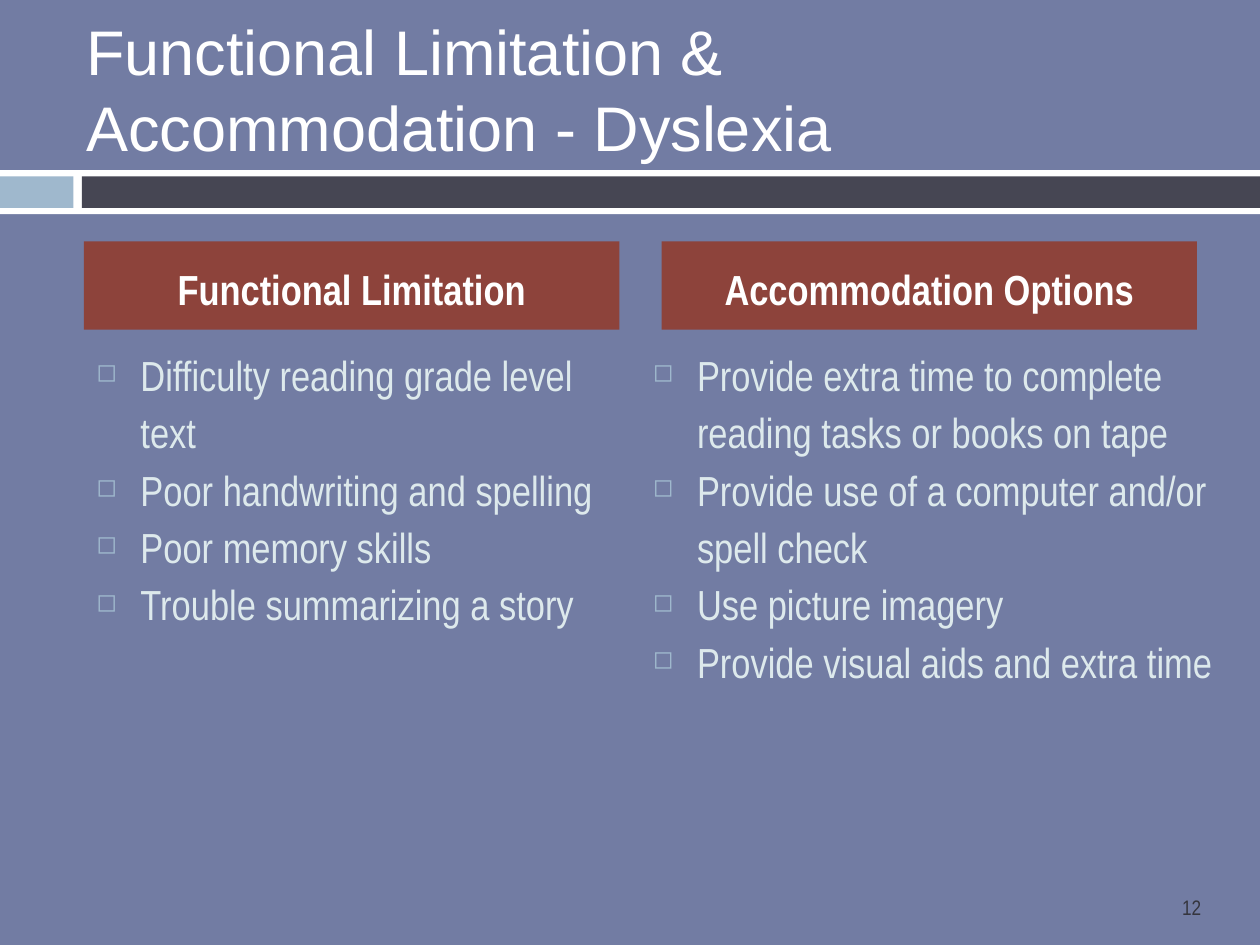
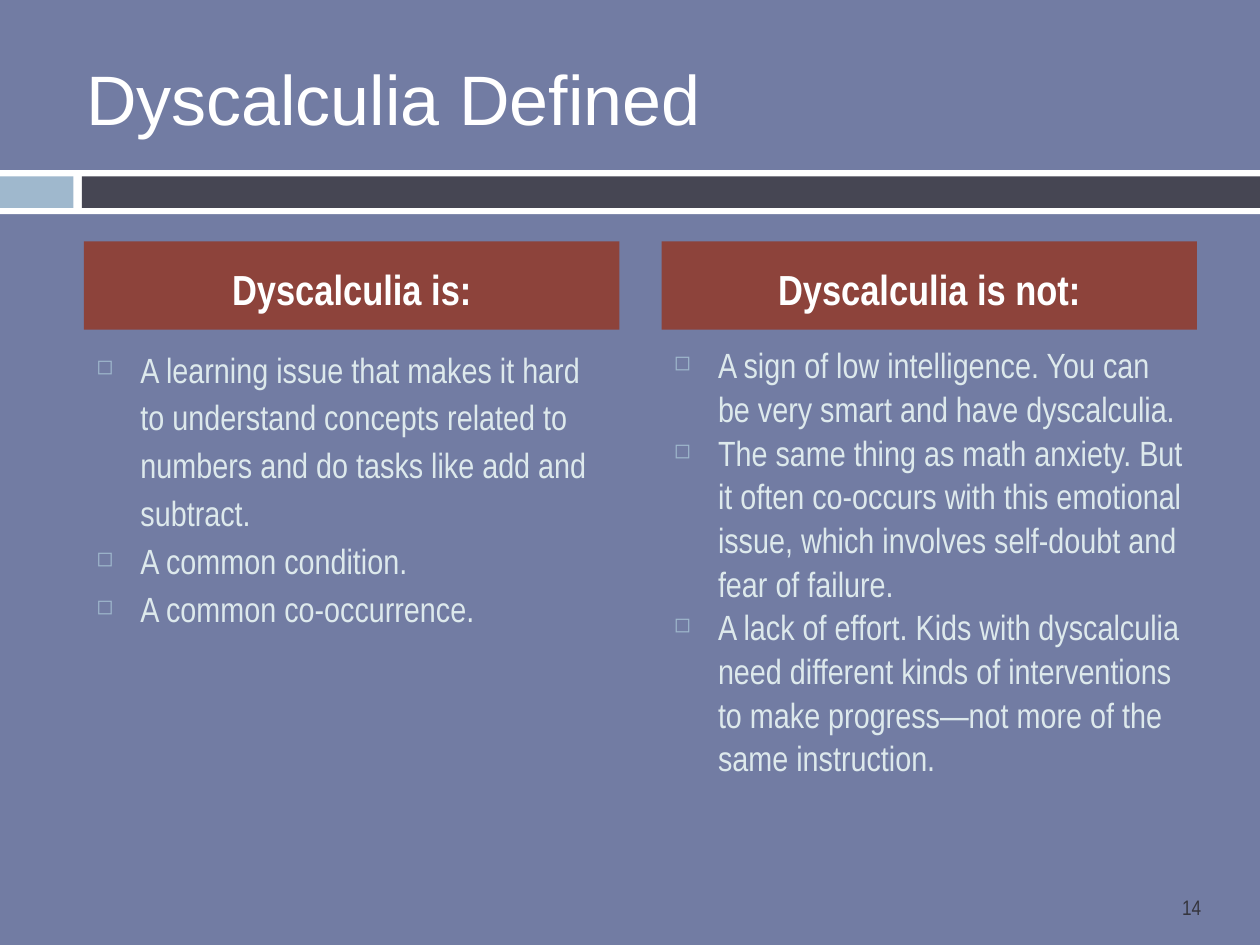
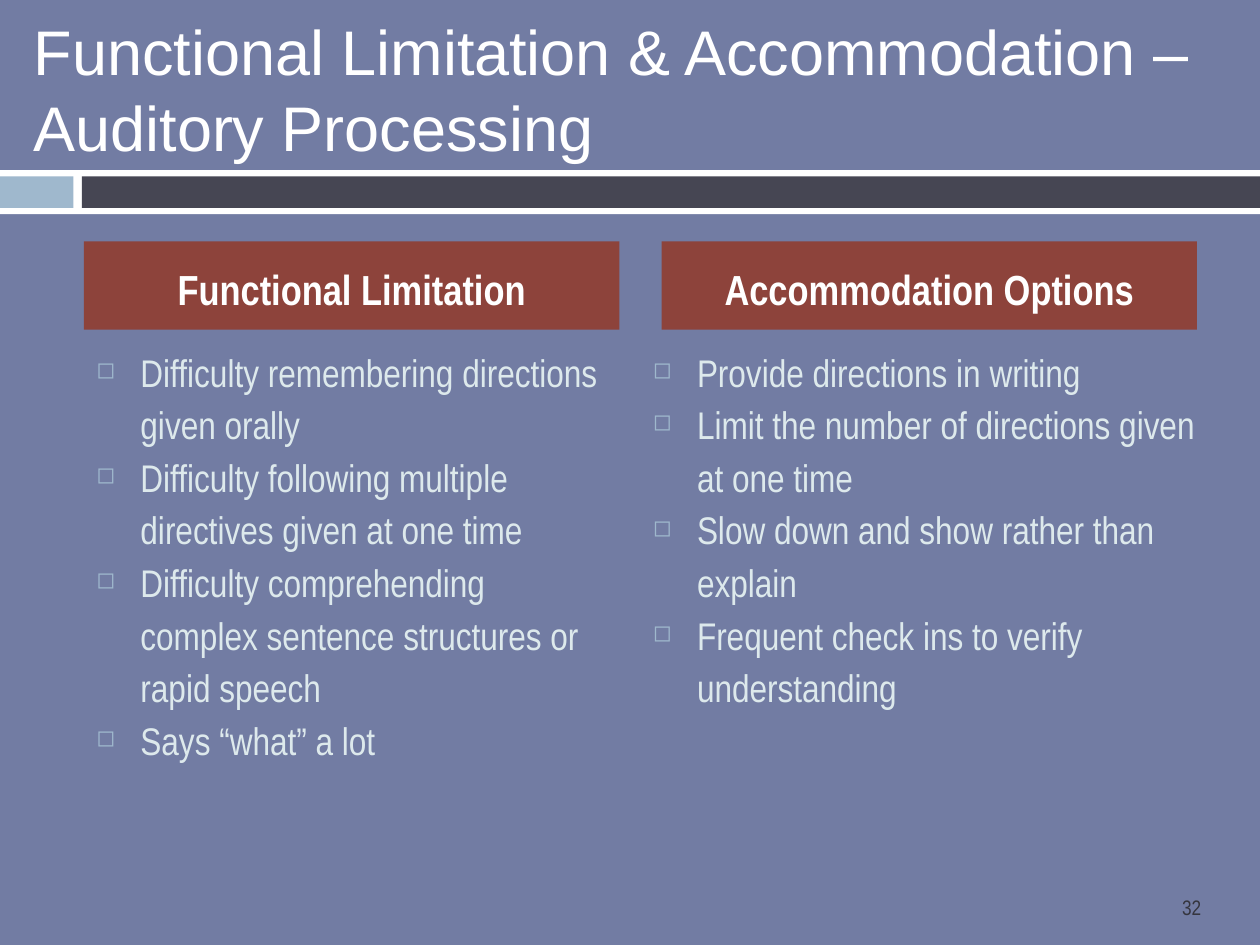
from dataclasses import dataclass

import pptx
import pptx.dml.color
import pptx.enum.shapes
import pptx.enum.text
import pptx.oxml.ns
import pptx.presentation
import pptx.shapes.base
import pptx.slide
import pptx.text.text
import pptx.util
from lxml import etree

RGBColor = pptx.dml.color.RGBColor
ALIGN = pptx.enum.text.PP_ALIGN
MIDDLE = pptx.enum.text.MSO_ANCHOR.MIDDLE

EMU_PER_PX = 7620
SLIDE_WIDTH, SLIDE_HEIGHT = 1200, 900
BULLET_INDENT = 42
TITLE_FONT = "Arial"
BODY_FONT = "Arial Narrow"
BODY_SPACING = 1.14

SLATE = RGBColor(0x72, 0x7C, 0xA3)
WHITE = RGBColor(0xFF, 0xFF, 0xFF)
SKY = RGBColor(0x9F, 0xB8, 0xCD)
CHARCOAL = RGBColor(0x46, 0x46, 0x53)
BRICK = RGBColor(0x8D, 0x43, 0x3B)
MIST = RGBColor(0xDD, 0xE9, 0xEC)
INK = RGBColor(0x35, 0x35, 0x3E)


@dataclass(frozen=True)
class Box:
    left: int
    top: int
    width: int
    height: int

    def emu(self) -> list[int]:
        return [px(n) for n in (self.left, self.top, self.width, self.height)]


@dataclass(frozen=True)
class TextStyle:
    font: str
    size: int
    color: RGBColor
    bold: bool = False
    align: ALIGN = ALIGN.LEFT
    spacing: float = 1.0


@dataclass(frozen=True)
class Band:
    box: Box
    color: RGBColor


@dataclass(frozen=True)
class Column:
    heading: str
    points: list[str]
    box: Box
    spacing: float = BODY_SPACING


@dataclass(frozen=True)
class Comparison:
    title: str
    title_box: Box
    title_size: int
    body_size: int
    columns: list[Column]
    number: int


BANDS = [
    Band(Box(0, 162, SLIDE_WIDTH, 42), WHITE),
    Band(Box(0, 168, 70, 30), SKY),
    Band(Box(78, 168, SLIDE_WIDTH - 78, 30), CHARCOAL),
]
HEADING_BOXES = [Box(left, 230, 510, 84) for left in (80, 630)]
NUMBER_BOX = Box(1100, 850, 70, 32)
LEFT_BODY = Box(80, 320, 510, 470)
WIDE_RIGHT_BODY = Box(610, 320, 560, 470)

HEADING_STYLE = TextStyle(BODY_FONT, 24, WHITE, True, ALIGN.CENTER, BODY_SPACING)
NUMBER_STYLE = TextStyle(BODY_FONT, 12, INK, align=ALIGN.CENTER, spacing=0.8)

COMPARISONS = [
    Comparison(
        "Functional Limitation & Accommodation - Dyslexia",
        Box(70, 18, 1070, 132), 36, 24,
        [
            Column("Functional Limitation", [
                "Difficulty reading grade level text",
                "Poor handwriting and spelling",
                "Poor memory skills",
                "Trouble summarizing a story",
            ], LEFT_BODY),
            Column("Accommodation Options", [
                "Provide extra time to complete reading tasks or books on tape",
                "Provide use of a computer and/or spell check",
                "Use picture imagery",
                "Provide visual aids and extra time",
            ], WIDE_RIGHT_BODY),
        ], 12),
    Comparison(
        "Dyscalculia Defined",
        Box(70, 36, 1070, 114), 40, 20,
        [
            Column("Dyscalculia is:", [
                "A learning issue that makes it hard to understand concepts "
                "related to numbers and do tasks like add and subtract.",
                "A common condition.",
                "A common co-occurrence.",
            ], Box(80, 320, 510, 330)),
            Column("Dyscalculia is not:", [
                "A sign of low intelligence. You can be very smart and have dyscalculia.",
                "The same thing as math anxiety. But it often co-occurs with this "
                "emotional issue, which involves self-doubt and fear of failure.",
                "A lack of effort. Kids with dyscalculia need different kinds of "
                "interventions to make progress—not more of the same instruction.",
            ], Box(630, 320, 510, 440), 1.04),
        ], 14),
    Comparison(
        "Functional Limitation & Accommodation – Auditory Processing",
        Box(20, 18, 1150, 132), 36, 22,
        [
            Column("Functional Limitation", [
                "Difficulty remembering directions given orally",
                "Difficulty following multiple directives given at one time",
                "Difficulty comprehending complex sentence structures or rapid speech",
                "Says “what” a lot",
            ], LEFT_BODY),
            Column("Accommodation Options", [
                "Provide directions in writing",
                "Limit the number of directions given at one time",
                "Slow down and show rather than explain",
                "Frequent check ins to verify understanding",
            ], WIDE_RIGHT_BODY),
        ], 32),
]


def px(length: int) -> int:
    return pptx.util.Emu(length * EMU_PER_PX)


def add_bullet(paragraph: pptx.text.text._Paragraph) -> None:
    qn = pptx.oxml.ns.qn
    properties = paragraph._p.get_or_add_pPr()
    properties.set("marL", str(px(BULLET_INDENT)))
    properties.set("indent", str(-px(BULLET_INDENT)))
    color = etree.SubElement(properties, qn("a:buClr"))
    etree.SubElement(color, qn("a:srgbClr"), val=str(SKY))
    etree.SubElement(properties, qn("a:buSzPct"), val="60000")
    etree.SubElement(properties, qn("a:buChar"), char="◻")


def write(frame: pptx.text.text.TextFrame, lines: list[str], style: TextStyle,
          bulleted: bool = False) -> None:
    frame.word_wrap = True
    frame.auto_size = pptx.enum.text.MSO_AUTO_SIZE.NONE
    frame.text = "\n".join(lines)
    for paragraph in frame.paragraphs:
        paragraph.alignment = style.align
        paragraph.line_spacing = style.spacing
        if bulleted:
            add_bullet(paragraph)
        paragraph.font.name = style.font
        paragraph.font.size = pptx.util.Pt(style.size)
        paragraph.font.bold = style.bold
        paragraph.font.color.rgb = style.color


def add_block(slide: pptx.slide.Slide, box: Box, color: RGBColor) -> pptx.shapes.base.BaseShape:
    block = slide.shapes.add_shape(pptx.enum.shapes.MSO_SHAPE.RECTANGLE, *box.emu())
    block.shadow.inherit = False
    block.fill.solid()
    block.fill.fore_color.rgb = color
    block.line.fill.background()
    return block


def add_column(slide: pptx.slide.Slide, column: Column, heading_box: Box, size: int) -> None:
    body = slide.shapes.add_textbox(*column.box.emu())
    style = TextStyle(BODY_FONT, size, MIST, spacing=column.spacing)
    write(body.text_frame, column.points, style, bulleted=True)
    heading = add_block(slide, heading_box, BRICK)
    heading.text_frame.vertical_anchor = MIDDLE
    write(heading.text_frame, [column.heading], HEADING_STYLE)


def add_comparison(deck: pptx.presentation.Presentation, comparison: Comparison) -> None:
    slide = deck.slides.add_slide(deck.slide_layouts.get_by_name("Title Only"))
    for band in BANDS:
        add_block(slide, band.box, band.color)

    title = slide.shapes.title
    title.left, title.top, title.width, title.height = comparison.title_box.emu()
    title.text_frame.vertical_anchor = MIDDLE
    write(title.text_frame, [comparison.title],
          TextStyle(TITLE_FONT, comparison.title_size, WHITE))

    for column, heading_box in zip(comparison.columns, HEADING_BOXES):
        add_column(slide, column, heading_box, comparison.body_size)

    number = slide.shapes.add_textbox(*NUMBER_BOX.emu())
    number.text_frame.vertical_anchor = MIDDLE
    write(number.text_frame, [str(comparison.number)], NUMBER_STYLE)


def main() -> None:
    deck = pptx.Presentation()
    deck.slide_width, deck.slide_height = px(SLIDE_WIDTH), px(SLIDE_HEIGHT)
    backdrop = deck.slide_master.background.fill
    backdrop.solid()
    backdrop.fore_color.rgb = SLATE
    for comparison in COMPARISONS:
        add_comparison(deck, comparison)
    deck.save("out.pptx")


if __name__ == "__main__":
    main()
